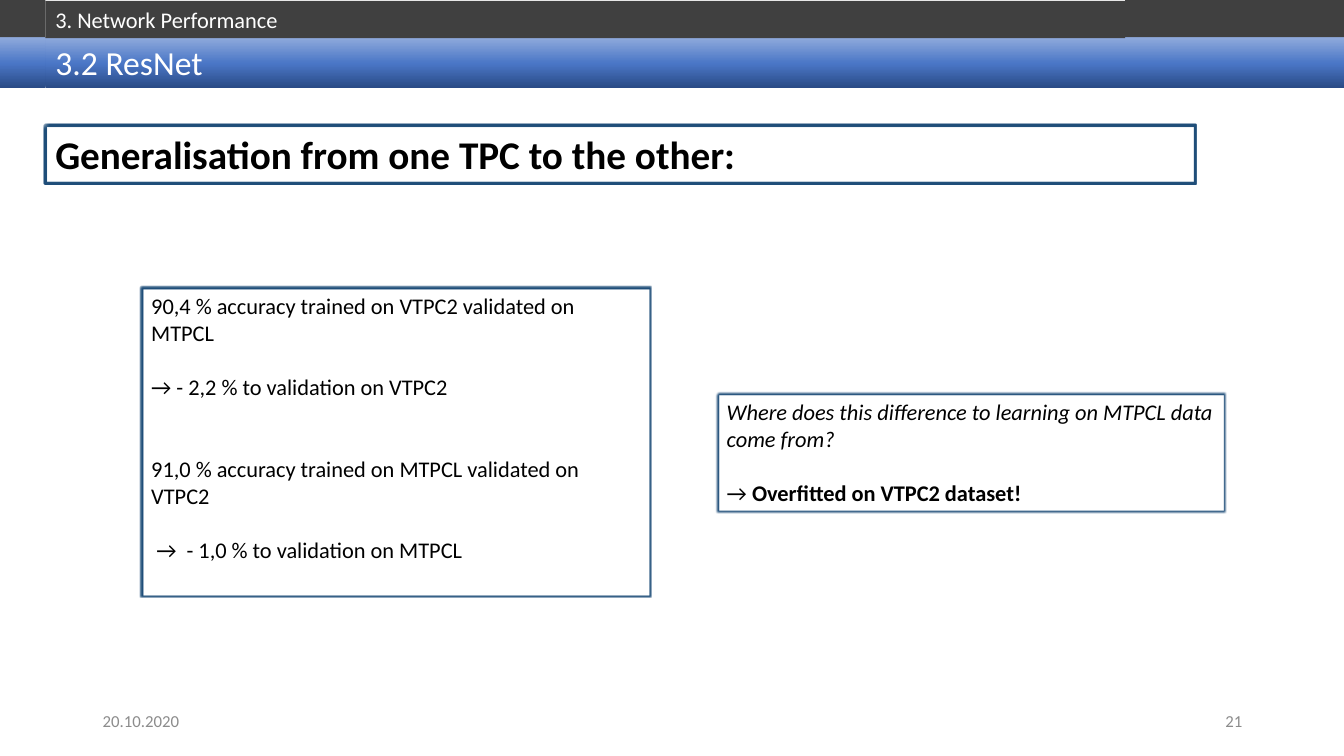
from copy import deepcopy

from pptx import Presentation
from pptx.dml.color import RGBColor
from pptx.enum.shapes import MSO_SHAPE as Shape
from pptx.enum.text import MSO_ANCHOR as Anchor, MSO_AUTO_SIZE as Fit, PP_ALIGN as Align
from pptx.oxml.ns import qn
from pptx.oxml.xmlchemy import OxmlElement as Node
from pptx.util import Inches, Pt

DARK, NAVY, WHITE, BLACK, GREY = "404040", "1F4E79", "FFFFFF", "000000", "8C8C8C"
BLUES = [(0, "2A4B86"), (0.48, "4A76C6"), (1, "8FAADC")]


def tint(color, code):
    """Set a colour from a hex string."""
    color.rgb = RGBColor.from_string(code)


def place(shape, box):
    """Move a shape to a box given in inches."""
    shape.left, shape.top, shape.width, shape.height = map(Inches, box)


def block(slide, box):
    """Add a plain rectangle without line or shadow."""
    shape = slide.shapes.add_shape(Shape.RECTANGLE, *map(Inches, box))
    shape.shadow.inherit = False
    shape.line.fill.background()
    return shape


def paint(shape, code):
    """Fill a shape with one colour."""
    shape.fill.solid()
    tint(shape.fill.fore_color, code)


def blend(shape):
    """Fill a shape with the blue gradient, dark at the foot."""
    shape.fill.gradient()
    shape.fill.gradient_angle = 90
    stops = shape._element.spPr.find(".//" + qn("a:gsLst"))
    stops.insert(1, deepcopy(stops[0]))
    for stop, (spot, code) in zip(shape.fill.gradient_stops, BLUES):
        stop.position = spot
        tint(stop.color, code)


def frame(shape):
    """Give a shape a white fill and a soft navy border."""
    paint(shape, WHITE)
    tint(shape.line.color, NAVY)
    shape.line.width = Pt(2.5)
    props = shape._element.spPr
    for old in props.findall(qn("a:effectLst")):
        props.remove(old)
    list_, soft = Node("a:effectLst"), Node("a:softEdge")
    soft.set("rad", "12700")
    list_.append(soft)
    props.append(list_)


def write(shape, lines, size, code, align=Align.LEFT, anchor=Anchor.TOP, gaps=()):
    """Write lines into a shape, with the gap in points before each."""
    text = shape.text_frame
    text.text = "\n".join(lines)
    text.word_wrap, text.auto_size = True, Fit.NONE
    text.vertical_anchor = anchor
    for i, para in enumerate(text.paragraphs):
        para.alignment = align
        para.space_before = Pt(gaps[i] if gaps else 0)
        for run in para.runs:
            style(run, size, code)


def style(run, size, code):
    """Set font, size and colour of a run."""
    run.font.name, run.font.size = "Calibri", Pt(size)
    tint(run.font.color, code)


def header(slide, box):
    """Build the section strip and the title band."""
    x, y, w, h = box
    edge, strip, name = 0.45, 0.37, 10.71
    title = slide.shapes.title
    place(title, (x + edge, y + strip, w - edge, h - strip))
    blend(title)
    write(title, ["3.2 ResNet"], 24, WHITE)
    blend(block(slide, (x, y + strip, edge, h - strip)))
    part = block(slide, (x + edge, y + 0.01, name, strip))
    paint(part, DARK)
    write(part, ["3. Network Performance"], 16, WHITE)
    for left, wide in ((x, edge), (x + edge + name, w - edge - name)):
        paint(block(slide, (left, y, wide, strip)), DARK)


def claim(slide, box):
    """Build the bold heading in its frame."""
    shape = block(slide, box)
    frame(shape)
    write(shape, ["Generalisation from one TPC to the other:"], 28, BLACK)
    shape.text_frame.paragraphs[0].runs[0].font.bold = True


def scores(slide, box):
    """Build the list of accuracies in the body placeholder."""
    body = slide.placeholders[1]
    place(body, box)
    frame(body)
    write(body, ["90,4 % accuracy trained on VTPC2 validated on MTPCL",
                 "→ - 2,2 % to validation on VTPC2",
                 "91,0 % accuracy trained on MTPCL validated on VTPC2",
                 " →  - 1,0 % to validation on MTPCL"],
          16, BLACK, gaps=(0, 19.5, 39, 19.5))
    for para in body.text_frame.paragraphs:
        props = para._p.get_or_add_pPr()
        props.set("marL", "0")
        props.set("indent", "0")
        props.append(Node("a:buNone"))


def answer(slide, box):
    """Build the question and its answer."""
    shape = block(slide, box)
    frame(shape)
    write(shape, ["Where does this difference to learning on MTPCL data come from?", "→ "],
          16, BLACK, gaps=(0, 19.5))
    ask, reply = shape.text_frame.paragraphs
    ask.runs[0].font.italic = True
    bold = reply.add_run()
    bold.text = "Overfitted on VTPC2 dataset!"
    style(bold, 16, BLACK)
    bold.font.bold = True


def footer(slide, box):
    """Build the date and the page number at the two ends."""
    x, y, w, h = box
    wide = 3
    for left, word, align in ((x, "20.10.2020", Align.LEFT),
                              (x + w - wide, "21", Align.RIGHT)):
        note = slide.shapes.add_textbox(*map(Inches, (left, y, wide, h)))
        write(note, [word], 12, GREY, align, Anchor.MIDDLE)


def main():
    """Build the slide and save it."""
    deck = Presentation()
    deck.slide_width, deck.slide_height = Inches(13.33), Inches(7.5)
    slide = deck.slides.add_slide(deck.slide_layouts[1])
    header(slide, (0, 0, 13.33, 0.87))
    claim(slide, (0.45, 1.24, 11.4, 0.57))
    scores(slide, (1.4, 2.85, 5.04, 3.06))
    answer(slide, (7.11, 3.9, 5.04, 1.18))
    footer(slide, (0.92, 6.95, 11.5, 0.4))
    deck.save("out.pptx")


if __name__ == "__main__":
    main()
